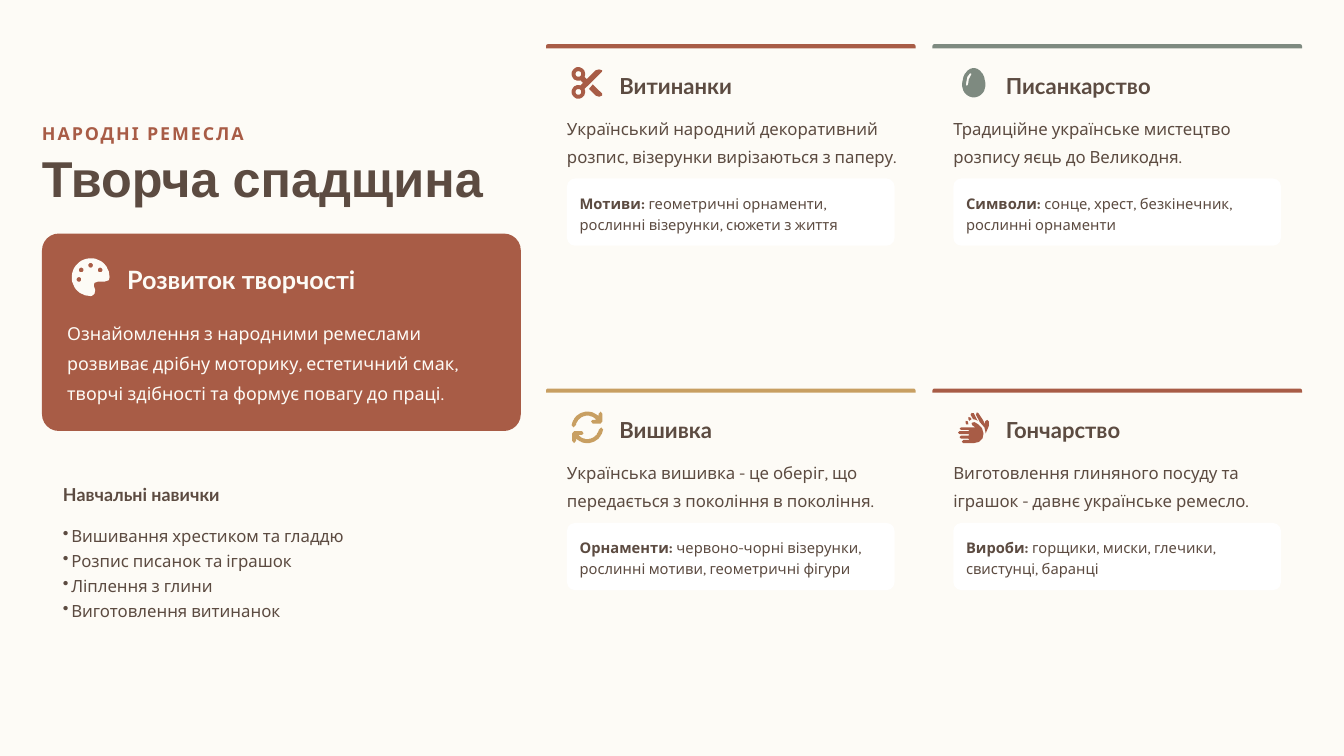
from dataclasses import dataclass
from math import cos, radians, sin

from lxml import etree
from pptx import Presentation
from pptx.dml.color import RGBColor as RGB
from pptx.enum.shapes import MSO_SHAPE as Shape
from pptx.enum.text import MSO_ANCHOR as Anchor, MSO_AUTO_SIZE as AutoSize, PP_ALIGN as Align
from pptx.oxml.ns import qn
from pptx.util import Emu, Inches, Pt

CREAM = RGB(0xFD, 0xFB, 0xF6)
WHITE = RGB(0xFF, 0xFF, 0xFF)
BROWN = RGB(0x5C, 0x4B, 0x41)
RUST = RGB(0xA8, 0x5C, 0x46)
SAGE = RGB(0x7E, 0x8A, 0x80)
GOLD = RGB(0xC8, 0x9F, 0x62)

WIDTH, HEIGHT = Inches(17.78), Inches(10)
COLS = 64
CELL = WIDTH / COLS
CARD_COLS, CARD_ROWS = (26, 44.4), (2.1, 18.5)
CARD_W = 17.6

Point = tuple[float, float]
Contour = list[Point]


@dataclass
class Box:
    col: float
    row: float
    w: float
    h: float

    def emu(self) -> list[Emu]:
        return [Emu(round(v * CELL)) for v in (self.col, self.row, self.w, self.h)]


@dataclass
class Style:
    size: float
    font: str
    color: RGB = BROWN
    bold: bool = False
    spacing: float = 1.3


@dataclass
class Card:
    title: str
    body: str
    label: str
    detail: str
    color: RGB
    icon: list[Contour]


def arc(cx: float, cy: float, rx: float, ry: float, start: float, end: float) -> Contour:
    steps = 32
    angles = [radians(start + (end - start) * i / steps) for i in range(steps + 1)]
    return [(cx + rx * cos(a), cy + ry * sin(a)) for a in angles]


def dot(cx: float, cy: float, r: float) -> Contour:
    return arc(cx, cy, r, r, 0, 360)


PALETTE = [
    arc(50, 50, 50, 50, 90, 360)
    + [(98, 58), (86, 62), (68, 62), (60, 65), (58, 72), (62, 84), (60, 94), (54, 99)],
    *[dot(x, y, 6.3) for x, y in [(19, 56), (25, 31), (50, 18.5), (75, 31)]],
]
SCISSORS = [
    arc(21.5, 78.5, 21.5, 21.5, -73, -386)
    + [(96, 15), (97, 10), (87, 7), (76, 10), (48, 38)]
    + arc(21.5, 21.5, 21.5, 21.5, 26, -287) + [(36, 50)],
    dot(21.5, 21.5, 9),
    dot(21.5, 78.5, 9),
    [(55, 69), (76, 90), (87, 94), (97, 90), (97, 84), (67, 55)],
]
EGG = [
    arc(50, 56, 37, 53, 180, 360) + arc(50, 56, 37, 40, 0, 180),
    [(41, 26), (43, 21), (38, 19), (29, 31), (25, 55), (28, 60), (32, 55), (34, 40)],
]
ARROW = (
    arc(50, 50, 50, 50, -172, -45)
    + [(86, 7), (92, 0), (98, 7), (98, 31), (92, 38), (67, 38), (62, 31), (67, 26), (76, 26)]
    + arc(50, 50, 37, 37, -42, -168) + [(6, 50)]
)
ARROWS = [ARROW, [(100 - x, 100 - y) for x, y in ARROW]]
HANDS = [
    [(43, 36), (52, 33), (64, 40), (76, 52), (81, 69), (78, 85), (67, 96), (50, 100),
     (17, 100), (12, 95), (17, 90), (33, 90), (36, 88), (33, 86), (10, 86), (5, 81),
     (10, 76), (33, 76), (36, 74), (33, 71), (5, 71), (0, 67), (5, 62), (33, 62),
     (36, 60), (33, 58), (10, 58), (5, 54), (10, 50), (55, 50), (45, 43)],
    [(98, 31), (98, 45), (88, 69), (84, 50), (69, 33), (57, 10), (60, 2), (65, 5),
     (79, 26), (86, 40), (86, 31), (93, 26)],
    [(57, 26), (48, 24), (40, 10), (43, 4), (50, 5), (62, 29)],
    [(40, 19), (43, 24), (36, 29), (33, 24), (33, 17)],
    [(31, 31), (33, 40), (26, 40), (24, 35), (24, 29)],
]

SKILLS = [
    "Вишивання хрестиком та гладдю",
    "Розпис писанок та іграшок",
    "Ліплення з глини",
    "Виготовлення витинанок",
]
CARDS = [
    Card("Витинанки", "Український народний декоративний розпис, візерунки вирізаються з паперу.",
         "Мотиви:", " геометричні орнаменти, рослинні візерунки, сюжети з життя", RUST, SCISSORS),
    Card("Писанкарство", "Традиційне українське мистецтво розпису яєць до Великодня.",
         "Символи:", " сонце, хрест, безкінечник, рослинні орнаменти", SAGE, EGG),
    Card("Вишивка", "Українська вишивка - це оберіг, що передається з покоління в покоління.",
         "Орнаменти:", " червоно-чорні візерунки, рослинні мотиви, геометричні фігури", GOLD, ARROWS),
    Card("Гончарство", "Виготовлення глиняного посуду та іграшок - давнє українське ремесло.",
         "Вироби:", " горщики, миски, глечики, свистунці, баранці", RUST, HANDS),
]


def paint(sp, color: RGB) -> None:
    sp.fill.solid()
    sp.fill.fore_color.rgb = color
    sp.line.fill.background()
    sp.shadow.inherit = False


def panel(s, kind: Shape, box: Box, color: RGB, radius: float) -> None:
    sp = s.shapes.add_shape(kind, *box.emu())
    sp.adjustments[0] = radius
    paint(sp, color)


def icon(s, col: float, row: float, size: float, contours: list[Contour], color: RGB) -> None:
    first, *rest = contours
    fb = s.shapes.build_freeform(*first[0], scale=size * CELL / 100)
    fb.add_line_segments(first[1:], close=True)
    for contour in rest:
        fb.move_to(*contour[0])
        fb.add_line_segments(contour[1:], close=True)
    paint(fb.convert_to_shape(round(col * CELL), round(row * CELL)), color)


def write(sp, lines: list[str], style: Style) -> list:
    tf = sp.text_frame
    tf.text = "\n".join(lines)
    tf.word_wrap = True
    tf.auto_size = AutoSize.NONE
    tf.vertical_anchor = Anchor.MIDDLE
    tf.margin_left = tf.margin_right = tf.margin_top = tf.margin_bottom = 0
    for p in tf.paragraphs:
        p.alignment = Align.LEFT
        p.line_spacing = style.spacing
        for r in p.runs:
            r.font.size, r.font.name, r.font.bold = Pt(style.size), style.font, style.bold
            r.font.color.rgb = style.color
    return list(tf.paragraphs)


def text(s, box: Box, lines: list[str], style: Style) -> list:
    return write(s.shapes.add_textbox(*box.emu()), lines, style)


def bullet(p) -> None:
    pPr = p._p.get_or_add_pPr()
    indent = Inches(0.11)
    pPr.set("marL", str(indent))
    pPr.set("indent", str(-indent))
    etree.SubElement(pPr, qn("a:buChar")).set("char", "•")


def draw_card(s, card: Card, col: float, row: float) -> None:
    panel(s, Shape.ROUND_2_SAME_RECTANGLE, Box(col, row, CARD_W, 0.2), card.color, 0.5)
    icon(s, col + 1.22, row + 1.1, 1.5, card.icon, card.color)
    text(s, Box(col + 3.5, row + 1.15, 7, 1.4), [card.title], Style(21, "Lato", bold=True, spacing=1.2))
    text(s, Box(col + 1, row + 3.2, 16, 2.6), [card.body], Style(16, "Karla", spacing=1.4))
    panel(s, Shape.ROUNDED_RECTANGLE, Box(col + 1, row + 6.4, 15.6, 3.2), WHITE, 0.12)
    p, = text(s, Box(col + 1.6, row + 7, 14.76, 2), [card.label], Style(14, "Karla", bold=True, spacing=1.2))
    r = p.add_run()
    r.text = card.detail
    r.font.size, r.font.name, r.font.bold = Pt(14), "Karla", False
    r.font.color.rgb = BROWN


def main() -> None:
    prs = Presentation()
    prs.slide_width, prs.slide_height = WIDTH, HEIGHT
    s = prs.slides.add_slide(prs.slide_layouts[5])
    s.background.fill.solid()
    s.background.fill.fore_color.rgb = CREAM

    title = s.shapes.title
    title.left, title.top, title.width, title.height = Box(2, 7.5, 24, 2.4).emu()
    write(title, ["Творча спадщина"], Style(48, "Arial", bold=True, spacing=0.8))
    p, = text(s, Box(2, 5.5, 23.25, 1.4), ["НАРОДНІ РЕМЕСЛА"], Style(17, "Karla", RUST, True))
    p.runs[0]._r.get_or_add_rPr().set("spc", "180")

    panel(s, Shape.ROUNDED_RECTANGLE, Box(2, 11.12, 22.8, 9.4), RUST, 0.085)
    icon(s, 3.42, 12.3, 1.8, PALETTE, CREAM)
    text(s, Box(6.05, 12.42, 12, 1.58), ["Розвиток творчості"], Style(24, "Lato", CREAM, True, 1.1))
    text(s, Box(3.2, 14.9, 20.84, 4.4),
         ["Ознайомлення з народними ремеслами розвиває дрібну моторику, "
          "естетичний смак, творчі здібності та формує повагу до праці."],
         Style(17, "Karla", CREAM, spacing=1.4))

    text(s, Box(3, 22.68, 21.2, 1.4), ["Навчальні навички"], Style(17, "Lato", bold=True))
    for p in text(s, Box(3, 24.77, 21.2, 4.8), SKILLS, Style(16, "Karla", spacing=Pt(24))):
        bullet(p)

    for i, card in enumerate(CARDS):
        draw_card(s, card, CARD_COLS[i % 2], CARD_ROWS[i // 2])
    prs.save("out.pptx")


if __name__ == "__main__":
    main()
